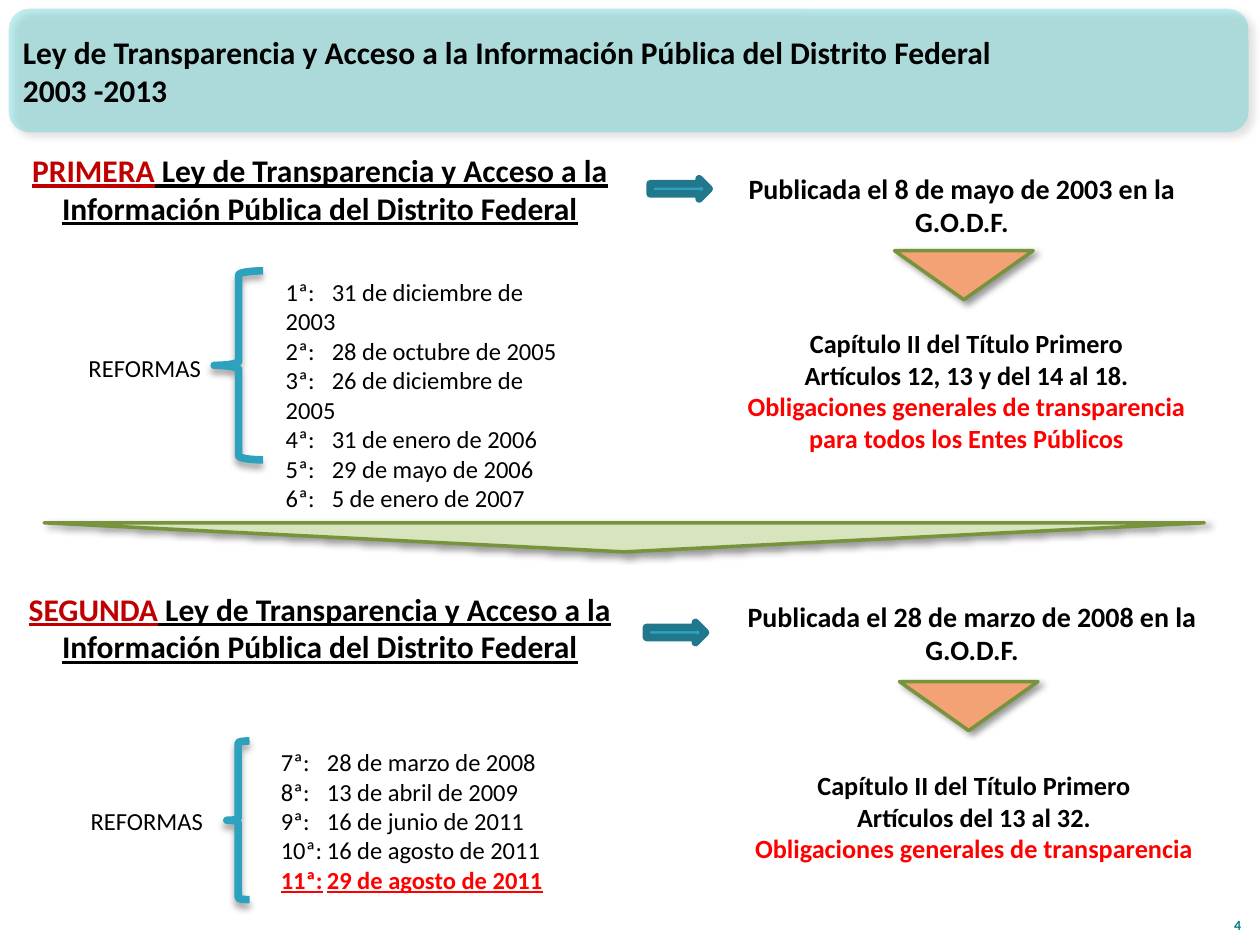
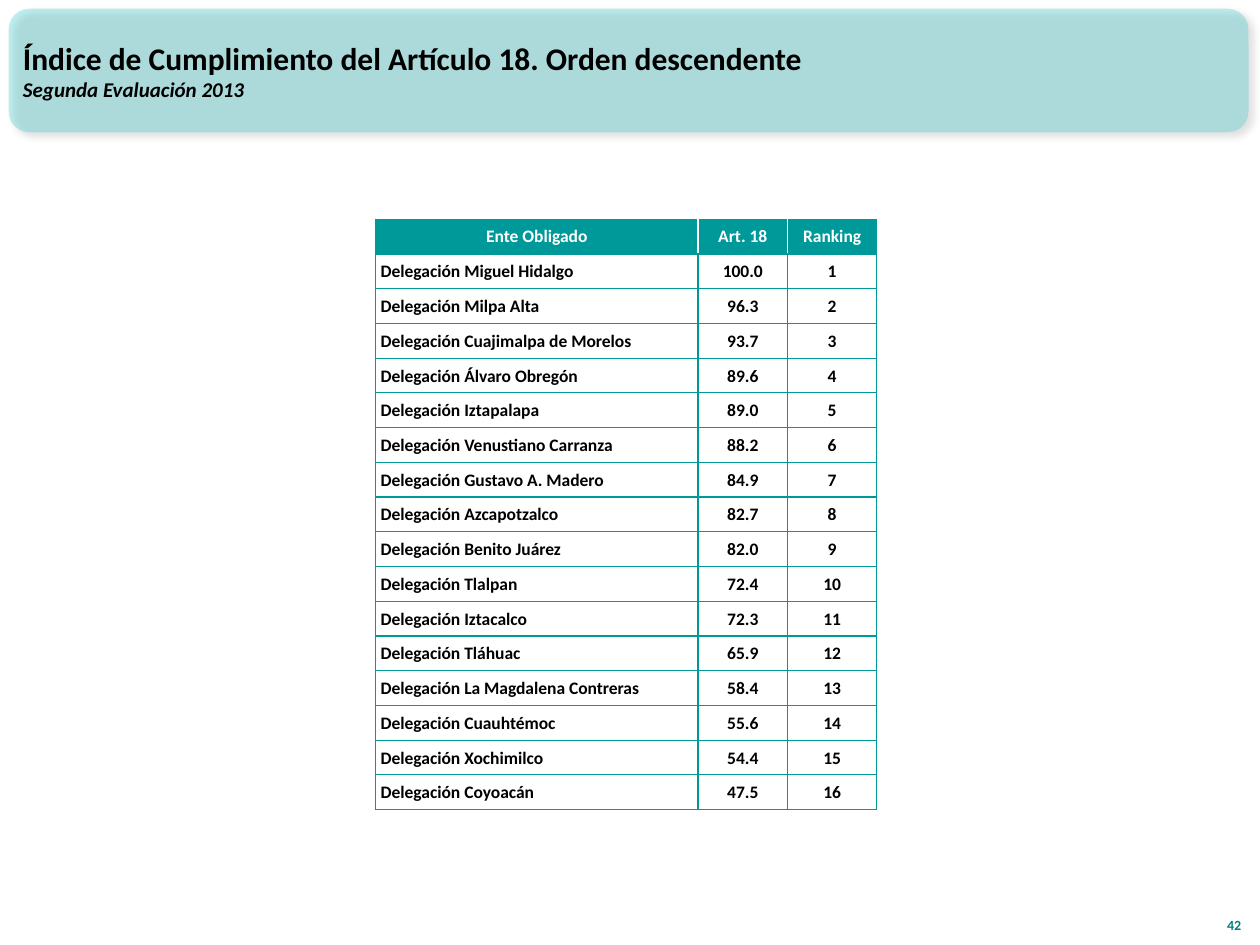
from lxml import etree
from pptx import Presentation
from pptx.dml.color import RGBColor
from pptx.enum import shapes, text
from pptx.oxml import ns
from pptx.util import Pt

BLACK = RGBColor(0x00, 0x00, 0x00)
WHITE = RGBColor(0xFF, 0xFF, 0xFF)
RED = RGBColor(0xFF, 0x00, 0x00)
DARK_RED = RGBColor(0xC0, 0x00, 0x00)
AQUA = RGBColor(0x33, 0xCC, 0xCC)
TEAL = RGBColor(0x00, 0x99, 0x99)
PAGE_TEAL = RGBColor(0x00, 0x80, 0x80)
BLUE = RGBColor(0x2D, 0xA2, 0xBF)
DARK_BLUE = RGBColor(0x21, 0x78, 0x8D)
GREEN = RGBColor(0x77, 0x93, 0x3C)
PALE_GREEN = RGBColor(0xD7, 0xE4, 0xBD)
ORANGE = RGBColor(0xF3, 0xA2, 0x76)

SHAPE = shapes.MSO_SHAPE
LEFT, CENTER, RIGHT = text.PP_ALIGN.LEFT, text.PP_ALIGN.CENTER, text.PP_ALIGN.RIGHT
TOP, MIDDLE, BOTTOM = text.MSO_ANCHOR.TOP, text.MSO_ANCHOR.MIDDLE, text.MSO_ANCHOR.BOTTOM

LAW_NAME = " Ley de Transparencia y Acceso a la Información Pública del Distrito Federal"
DUTIES = "Obligaciones generales de transparencia"
DATE_TAB = 26.3

DELEGACIONES = [
    ("Miguel Hidalgo", 100.0), ("Milpa Alta", 96.3), ("Cuajimalpa de Morelos", 93.7),
    ("Álvaro Obregón", 89.6), ("Iztapalapa", 89.0), ("Venustiano Carranza", 88.2),
    ("Gustavo A. Madero", 84.9), ("Azcapotzalco", 82.7), ("Benito Juárez", 82.0),
    ("Tlalpan", 72.4), ("Iztacalco", 72.3), ("Tláhuac", 65.9),
    ("La Magdalena Contreras", 58.4), ("Cuauhtémoc", 55.6), ("Xochimilco", 54.4),
    ("Coyoacán", 47.5),
]


def child(parent, tag, **attributes):
    return etree.SubElement(parent, ns.qn(tag), attributes)


def solid_color(parent, color, tag="a:solidFill"):
    return child(child(parent, tag), "a:srgbClr", val=str(color))


class Deck:
    """Holds the shared style and the slide being filled; boxes are (x, y, w, h) in points."""

    font = "Calibri"

    def __init__(self):
        self.deck = Presentation()
        self.deck.slide_width, self.deck.slide_height = Pt(720), Pt(540)
        self.slide = None

    def start_slide(self, title, page):
        self.slide = self.deck.slides.add_slide(self.deck.slide_layouts[6])
        band = self.shape(SHAPE.ROUNDED_RECTANGLE, (5, 5, 708.5, 70.6), AQUA, shadow=(40, 45))
        color = band.fill._xPr.find(".//" + ns.qn("a:srgbClr"))
        child(color, "a:alpha", val="30000")
        self.text((6, 6.5, 663, 67.7), title, 18, bold=True, align=LEFT, anchor=MIDDLE)
        self.text((687.6, 508.3, 28.8, 28.8), [[(page, {"color": PAGE_TEAL})]], 8,
                  bold=True, align=RIGHT, anchor=BOTTOM)

    def shape(self, kind, box, fill=None, line=None, width=0, shadow=None, flip=False):
        """shadow is (opacity percent, angle in degrees)."""
        item = self.slide.shapes.add_shape(kind, *map(Pt, box))
        if fill is None:
            item.fill.background()
        else:
            item.fill.solid()
            item.fill.fore_color.rgb = fill
        if line is None:
            item.line.fill.background()
        else:
            item.line.color.rgb = line
            item.line.width = Pt(width)
        item.shadow.inherit = False
        properties = item._element.spPr
        if shadow:
            opacity, angle = shadow
            effect = child(properties.find(ns.qn("a:effectLst")), "a:outerShdw",
                           blurRad=str(Pt(4)), dist=str(Pt(3)), dir=str(angle * 60000),
                           algn="tl", rotWithShape="0")
            child(child(effect, "a:srgbClr", val=str(BLACK)), "a:alpha", val=str(opacity * 1000))
        if flip:
            properties.find(ns.qn("a:xfrm")).set("flipV", "1")
        return item

    def down_triangle(self, box, fill):
        return self.shape(SHAPE.ISOSCELES_TRIANGLE, box, fill, GREEN, 2, (40, 45), flip=True)

    def arrow(self, x, y):
        self.shape(SHAPE.RIGHT_ARROW, (x, y, 33.8, 11.5), BLUE, DARK_BLUE, 4.33)

    def brace(self, box):
        self.shape(SHAPE.LEFT_BRACE, box, None, BLUE, 4.33, (35, 90))

    def run(self, paragraph, words, size, bold=False, color=BLACK, italic=False, underline=False):
        run = paragraph.add_run()
        run.text = words
        font = run.font
        font.name, font.size, font.bold = self.font, Pt(size), bold
        font.italic, font.underline = italic, underline
        font.color.rgb = color

    def text(self, box, paragraphs, size, bold=False, align=CENTER, anchor=TOP, tab=None):
        """Each paragraph is a list of (words, changes to the run style)."""
        frame = self.slide.shapes.add_textbox(*map(Pt, box)).text_frame
        frame.word_wrap = True
        frame.vertical_anchor = anchor
        for index, runs in enumerate(paragraphs):
            paragraph = frame.add_paragraph() if index else frame.paragraphs[0]
            paragraph.alignment = align
            if tab:
                stops = child(paragraph._p.get_or_add_pPr(), "a:tabLst")
                child(stops, "a:tab", pos=str(Pt(tab)), algn="l")
            for words, changes in runs:
                self.run(paragraph, words, **{"size": size, "bold": bold, **changes})

    def cell(self, cell, words, align, header=False, inset=0.7, edges=()):
        """edges are the border colours in the order left, right, top, bottom."""
        cell.vertical_anchor = MIDDLE
        cell.margin_left = Pt(inset)
        cell.margin_right = cell.margin_top = Pt(0 if header else 0.7)
        cell.margin_bottom = 0
        if header:
            cell.fill.solid()
            cell.fill.fore_color.rgb = TEAL
        else:
            cell.fill.background()
        paragraph = cell.text_frame.paragraphs[0]
        paragraph.alignment = align
        self.run(paragraph, words, 10, bold=True, color=WHITE if header else BLACK)
        properties = cell._tc.get_or_add_tcPr()
        for index, (side, color) in enumerate(zip("LRTB", edges)):
            border = child(properties, f"a:ln{side}", w=str(Pt(0.75)))
            solid_color(border, color)
            properties.insert(index, border)

    def table(self, box, widths, rows):
        table = self.slide.shapes.add_table(len(rows), len(widths), *map(Pt, box)).table
        table.first_row = table.horz_banding = False
        for column, width in zip(table.columns, widths):
            column.width = Pt(width)
        last = len(widths) - 1
        for r, values in enumerate(rows):
            table.rows[r].height = Pt(box[3] / len(rows))
            header = r == 0
            inner = WHITE if header else TEAL
            for c, value in enumerate(values):
                name = c == 0 and not header
                self.cell(table.cell(r, c), value, LEFT if name else CENTER, header,
                          inset=2.9 if name else 0 if header else 0.7,
                          edges=(inner if c else TEAL, inner if c < last else TEAL, TEAL, TEAL))

    def law(self, ordinal, box):
        style = {"underline": True}
        self.text(box, [[(ordinal, {**style, "color": DARK_RED}), (LAW_NAME, style)]], 18, bold=True)

    def publication(self, date, box):
        self.text(box, [[(f"Publicada el {date} en la G.O.D.F.", {})]], 16, bold=True)

    def chapter(self, articles, duties, box):
        self.text(box, [[("Capítulo II del Título Primero", {})], [(articles, {})],
                        [(duties, {"color": RED})]], 15, bold=True)

    def reforms(self, first, dates, label_box, brace_box, list_box, last_style):
        self.text(label_box, [[("REFORMAS", {})]], 14)
        self.brace(brace_box)
        lines = [[(f"{number}ª:\t{date}", {})] for number, date in enumerate(dates, first)]
        lines[-1] = [(lines[-1][0][0], last_style)]
        self.text(list_box, lines, 14, align=LEFT, tab=DATE_TAB)


def law_history(deck):
    deck.start_slide([[(LAW_NAME.strip(), {})], [("2003 -2013", {})]], "4")

    deck.law("PRIMERA", (8.6, 82.8, 348.5, 51))
    deck.arrow(371.5, 102.2)
    deck.publication("8 de mayo de 2003", (393.8, 94.3, 311.8, 39.6))
    deck.down_triangle((511.2, 143.3, 79.2, 28), ORANGE)
    deck.chapter("Artículos 12, 13 y del 14 al 18.", DUTIES + " para todos los Entes Públicos",
                 (409, 183.6, 286.6, 77))
    deck.reforms(1, ["31 de diciembre de 2003", "28 de octubre de 2005", "26 de diciembre de 2005",
                     "31 de enero de 2006", "29 de mayo de 2006", "5 de enero de 2007"],
                 (37.4, 198, 90.7, 22.3), (122.4, 154.8, 28, 108), (156.2, 154.8, 181.4, 108), {})

    deck.down_triangle((25.2, 298.8, 663, 16.6), PALE_GREEN)

    deck.law("SEGUNDA", (8.6, 333.4, 348.5, 67.7))
    deck.arrow(369.4, 355.7)
    deck.publication("28 de marzo de 2008", (405.4, 339, 300.2, 45.4))
    deck.down_triangle((514, 389.5, 79.2, 28), ORANGE)
    deck.chapter("Artículos del 13 al 32.", DUTIES, (416.2, 436.3, 280.8, 60.5))
    deck.reforms(7, ["28 de marzo de 2008", "13 de abril de 2009", "16 de junio de 2011",
                     "16 de agosto de 2011", "29 de agosto de 2011"],
                 (27.4, 457.2, 113, 22.3), (129.6, 423.4, 13, 90.7), (153.4, 423.4, 170.6, 90.7),
                 {"color": RED, "bold": True, "underline": True})


def compliance_ranking(deck):
    deck.start_slide([[("Índice de Cumplimiento del Artículo 18. Orden descendente", {})],
                      [("Segunda Evaluación 2013", {"size": 12, "italic": True})]], "42")
    rows = [("Ente Obligado", "Art. 18", "Ranking")]
    rows += [(f"Delegación {name}", f"{score:.1f}", str(rank))
             for rank, (name, score) in enumerate(DELEGACIONES, 1)]
    deck.table((214.6, 125.3, 286.5, 337.6), (184.3, 51.1, 51.1), rows)


def main():
    deck = Deck()
    law_history(deck)
    compliance_ranking(deck)
    deck.deck.save("out.pptx")


if __name__ == "__main__":
    main()
